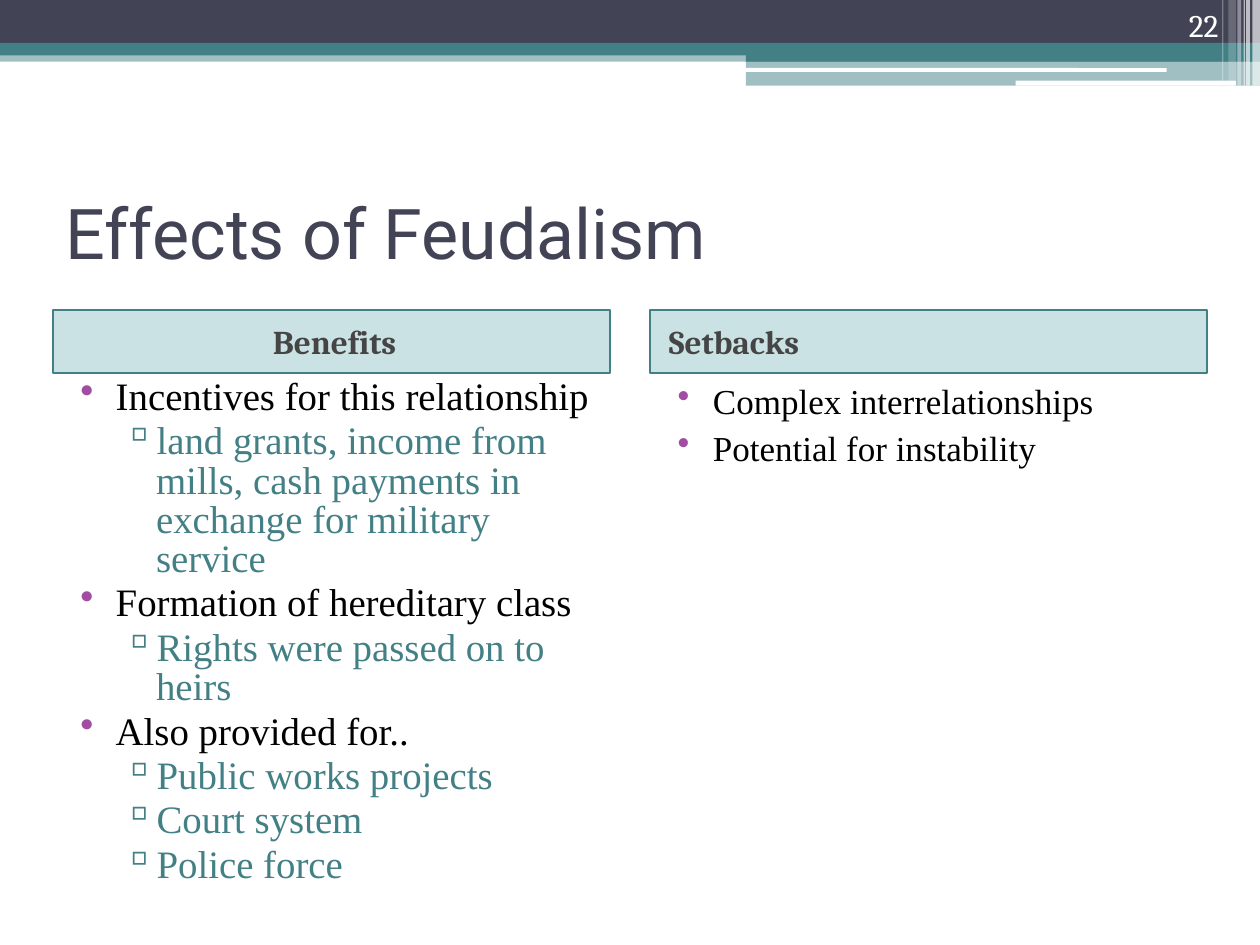
"""Build the slide on the benefits and setbacks of feudalism."""
from dataclasses import dataclass
from typing import Optional

from lxml import etree
from pptx import Presentation
from pptx import util as u
from pptx.dml.color import RGBColor
from pptx.enum import shapes, text
from pptx.oxml.ns import qn

COLORS = {
    "navy": "424456", "teal": "438086", "white": "FFFFFF", "panel": "328E97",
    "heading": "454545", "black": "000000", "purple": "A04DA3",
}
RECT = shapes.MSO_SHAPE.RECTANGLE
ROUND = shapes.MSO_SHAPE.ROUNDED_RECTANGLE
LEFT, CENTER, RIGHT = text.PP_ALIGN.LEFT, text.PP_ALIGN.CENTER, text.PP_ALIGN.RIGHT
HEADER_TOP, HEADER_HEIGHT = 2.46, 0.5
COLUMN_WIDTH, BODY_HEIGHT = 4.42, 4.25


@dataclass
class Band:
    left: float
    top: float
    width: float
    height: float
    color: str
    opacity: int = 100
    kind: int = RECT


@dataclass
class Level:
    symbol: str
    bullet_color: str
    text_color: str
    margin: float
    indent: float


@dataclass
class Column:
    left: float
    heading: str
    alignment: int
    size: float
    spacing: Optional[float]
    points: list[tuple[int, str]]


LEVELS = [
    Level("•", "purple", "black", 0.4, -0.28),
    Level("▫", "teal", "teal", 0.72, -0.27),
]
BANDS = [
    Band(0, 0.4, 10, 0.09, "teal", 50),
    Band(0, 0, 10, 0.34, "navy"),
    Band(0, 0.34, 10, 0.1, "teal"),
    Band(5.92, 0.39, 4.08, 0.1, "teal"),
    Band(5.92, 0.48, 4.08, 0.2, "teal", 50),
    Band(5.91, 0.54, 3.35, 0.03, "white", kind=ROUND),
    Band(8.06, 0.64, 1.75, 0.04, "white", kind=ROUND),
] + [
    Band(left, 0, width, height, "white", opacity)
    for left, width, height, opacity in [
        (9.94, 0.06, 0.68, 65), (9.89, 0.03, 0.68, 65), (9.87, 0.01, 0.68, 60),
        (9.82, 0.03, 0.68, 40), (9.75, 0.06, 0.64, 20), (9.7, 0.01, 0.64, 30),
    ]
]
COLUMNS = [
    Column(0.42, "Benefits", CENTER, 22.2, 0.84, [
        (0, "Incentives for this relationship"),
        (1, "land grants, income from mills, cash payments in exchange for military service"),
        (0, "Formation of hereditary class"),
        (1, "Rights were passed on to heirs"),
        (0, "Also provided for.."),
        (1, "Public works projects"),
        (1, "Court system"),
        (1, "Police force"),
    ]),
    Column(5.16, "Setbacks", LEFT, 20, None, [
        (0, "Complex interrelationships"),
        (0, "Potential for instability"),
    ]),
]


def rgb(color: str) -> RGBColor:
    """Look up a named colour."""
    return RGBColor.from_string(COLORS[color])


def apply(target, **values) -> None:
    """Set several attributes on one object."""
    for name, value in values.items():
        setattr(target, name, value)


def write(paragraph, words: str, font: str, size: float, color: str, bold: bool = False) -> None:
    """Add one formatted run to a paragraph."""
    run = paragraph.add_run()
    run.text = words
    apply(run.font, name=font, size=u.Pt(size), bold=bold)
    run.font.color.rgb = rgb(color)


def set_frame(frame, anchor: int) -> None:
    """Make a text frame wrap at a fixed size."""
    apply(frame, word_wrap=True, auto_size=text.MSO_AUTO_SIZE.NONE, vertical_anchor=anchor)


def set_indent(paragraph, margin: float, indent: float) -> None:
    """Set the left margin and first-line indent."""
    properties = paragraph._p.get_or_add_pPr()
    properties.set("marL", str(u.Inches(margin)))
    properties.set("indent", str(u.Inches(indent)))


def add_bullet(paragraph, level: Level) -> None:
    """Give a paragraph the bullet of its level."""
    properties = paragraph._p.get_or_add_pPr()
    bullet_color = etree.SubElement(properties, qn("a:buClr"))
    etree.SubElement(bullet_color, qn("a:srgbClr"), val=COLORS[level.bullet_color])
    etree.SubElement(properties, qn("a:buChar"), char=level.symbol)


def draw_band(slide, band: Band):
    """Draw a filled band without an outline."""
    shape = slide.shapes.add_shape(
        band.kind, *map(u.Inches, (band.left, band.top, band.width, band.height)))
    shape.shadow.inherit = False
    shape.fill.solid()
    shape.fill.fore_color.rgb = rgb(band.color)
    shape.line.fill.background()
    if band.opacity < 100:
        fill_color = shape._element.spPr.find(qn("a:solidFill"))[0]
        etree.SubElement(fill_color, qn("a:alpha"), val=str(band.opacity * 1000))
    return shape


def draw_column(slide, column: Column) -> None:
    """Draw a heading panel with its bulleted points."""
    panel = draw_band(
        slide, Band(column.left, HEADER_TOP, COLUMN_WIDTH, HEADER_HEIGHT, "panel", 25))
    panel.line.color.rgb = rgb("teal")
    panel.line.width = u.Pt(1)
    set_frame(panel.text_frame, text.MSO_ANCHOR.MIDDLE)
    heading = panel.text_frame.paragraphs[0]
    apply(heading, alignment=column.alignment, space_before=u.Pt(3))
    set_indent(heading, 0.05, 0)
    write(heading, column.heading, "Cambria", 19, "heading", True)

    body = slide.shapes.add_textbox(*map(
        u.Inches, (column.left, HEADER_TOP + HEADER_HEIGHT, COLUMN_WIDTH, BODY_HEIGHT)))
    frame = body.text_frame
    set_frame(frame, text.MSO_ANCHOR.TOP)
    for index, (depth, words) in enumerate(column.points):
        point = frame.add_paragraph() if index else frame.paragraphs[0]
        level = LEVELS[depth]
        apply(point, level=depth, space_before=u.Pt(3), line_spacing=column.spacing)
        set_indent(point, level.margin, level.indent)
        add_bullet(point, level)
        write(point, words, "Times New Roman", column.size, level.text_color)


def main() -> None:
    """Assemble and save the slide."""
    deck = Presentation()
    apply(deck, slide_width=u.Inches(10), slide_height=u.Inches(7.5))
    slide = deck.slides.add_slide(deck.slide_layouts[5])
    for band in BANDS:
        draw_band(slide, band)

    title = slide.shapes.title
    apply(title, left=u.Inches(0.42), top=u.Inches(1.25),
          width=u.Inches(9.17), height=u.Inches(1.17))
    set_frame(title.text_frame, text.MSO_ANCHOR.MIDDLE)
    title_line = title.text_frame.paragraphs[0]
    title_line.alignment = LEFT
    write(title_line, "Effects of Feudalism", "Roboto", 40, "navy")

    for column in COLUMNS:
        draw_column(slide, column)

    page = slide.shapes.add_textbox(*map(u.Inches, (8.94, 0, 0.83, 0.4)))
    set_frame(page.text_frame, text.MSO_ANCHOR.BOTTOM)
    page_number = page.text_frame.paragraphs[0]
    page_number.alignment = RIGHT
    write(page_number, "22", "Cambria", 18, "white")
    deck.save("out.pptx")


if __name__ == "__main__":
    main()
